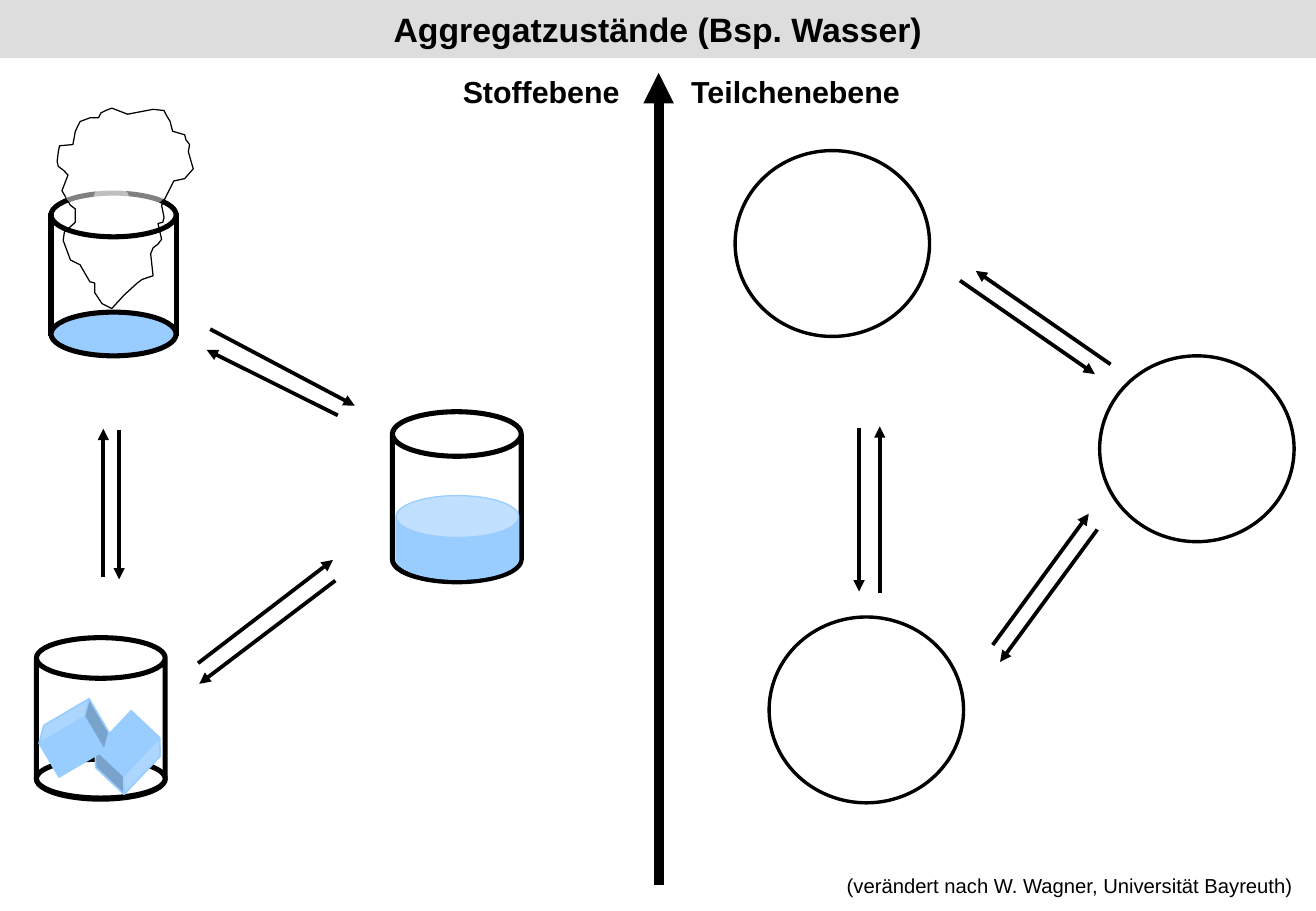
import pptx
import pptx.util
import pptx.dml.color
import pptx.enum.shapes
import pptx.enum.text
import pptx.oxml
import pptx.oxml.ns

Inches = pptx.util.Inches
Pt = pptx.util.Pt
RGBColor = pptx.dml.color.RGBColor
KIND = pptx.enum.shapes.MSO_SHAPE
TEXT = pptx.enum.text

BLACK = RGBColor(0x00, 0x00, 0x00)
WHITE = RGBColor(0xFF, 0xFF, 0xFF)
GREY = RGBColor(0xDD, 0xDD, 0xDD)
BLUE = RGBColor(0x99, 0xCC, 0xFF)

STEAM = [
    (19, 129), (11, 125), (5, 109), (6, 102), (15, 94), (15, 83),
    (11, 80), (4, 68), (9, 55), (5, 51), (1, 48), (0, 44), (1, 36),
    (2, 31), (13, 30), (15, 19), (19, 11), (27, 8), (34, 8), (36, 4),
    (40, 2), (45, 0), (58, 5), (79, 1), (88, 2), (90, 6), (93, 11),
    (95, 19), (105, 22), (106, 26), (109, 30), (108, 36), (112, 50),
    (105, 58), (96, 60), (90, 72), (86, 80), (88, 90), (87, 94),
    (83, 95), (86, 108), (83, 112), (79, 115), (77, 120), (79, 138),
    (70, 141), (66, 144), (55, 154), (45, 165), (37, 161), (31, 152),
    (31, 144), (27, 143), (20, 131),
]


def add_xml(parent, tag, attrs=""):
    space = pptx.oxml.ns.nsdecls("a")
    parent.append(pptx.oxml.parse_xml(f"<a:{tag} {space} {attrs}/>"))


def paint(shape, fill=None, edge=None, width=1):
    shape.shadow.inherit = False
    if fill is None:
        shape.fill.background()
    else:
        shape.fill.solid()
        shape.fill.fore_color.rgb = fill
    if edge is None:
        shape.line.fill.background()
    else:
        shape.line.color.rgb = edge
        shape.line.width = Pt(width)


def add_form(slide, kind, box, fill=None, edge=None, width=1, adjust=None, turn=0):
    shape = slide.shapes.add_shape(kind, *map(Inches, box))
    paint(shape, fill, edge, width)
    if adjust is not None:
        shape.adjustments[0] = adjust
    shape.rotation = turn
    return shape


def add_line(slide, ends, width, arrow=True):
    line = slide.shapes.add_connector(
        pptx.enum.shapes.MSO_CONNECTOR.STRAIGHT, *map(Inches, ends))
    line.line.color.rgb = BLACK
    line.line.width = Pt(width)
    props = line._element.spPr
    if arrow:
        add_xml(props.find(pptx.oxml.ns.qn("a:ln")), "tailEnd", 'type="triangle"')
    add_xml(props, "effectLst")


def set_text(frame, text, size, bold):
    para = frame.paragraphs[0]
    para.text = text
    font = para.font
    font.name, font.size, font.bold = "Arial", Pt(size), bold
    font.color.rgb = BLACK
    return para


def add_label(slide, box, text, size, bold=True):
    frame = slide.shapes.add_textbox(*map(Inches, box)).text_frame
    frame.word_wrap = False
    frame.auto_size = TEXT.MSO_AUTO_SIZE.SHAPE_TO_FIT_TEXT
    set_text(frame, text, size, bold)


def draw_head(slide, box):
    bar = add_form(slide, KIND.RECTANGLE, box, GREY)
    bar.text_frame.vertical_anchor = TEXT.MSO_ANCHOR.MIDDLE
    para = set_text(bar.text_frame, "Aggregatzustände (Bsp. Wasser)", 20, True)
    para.alignment = TEXT.PP_ALIGN.CENTER


def draw_steam(slide, box):
    x, y, w, h = box
    points = [(Inches(x + 0.05 + a / 100), Inches(y + b / 100)) for a, b in STEAM]
    pen = slide.shapes.build_freeform(*points[0])
    pen.add_line_segments(points[1:], close=True)
    paint(pen.convert_to_shape(), edge=BLACK, width=0.75)
    add_form(slide, KIND.OVAL, (x, y + 0.7, w, 0.36), edge=BLACK, width=3)
    for side in (x + w, x):
        add_line(slide, (side, y + 0.86, side, y + h - 0.16), 3, arrow=False)
    add_form(slide, KIND.OVAL, (x, y + h - 0.36, w, 0.36), BLUE, BLACK, 3)
    for left, wide in ((0.12, 0.52), (0.35, 0.58)):
        haze = add_form(slide, KIND.OVAL, (x + left, y + 0.62, wide, 0.21), WHITE)
        solid = haze._element.spPr.find(pptx.oxml.ns.qn("a:solidFill"))
        add_xml(solid[0], "alpha", 'val="50000"')


def draw_water(slide, box):
    x, y, w, h = box
    add_form(slide, KIND.CAN, box, WHITE, BLACK, 3, 0.346)
    add_form(slide, KIND.CAN, (x + 0.03, y + h - 0.71, w - 0.05, 0.69),
             BLUE, BLUE, 0.75, 0.5)


def draw_ice(slide, box):
    x, y, w, h = box
    add_form(slide, KIND.CAN, box, WHITE, BLACK, 3, 0.316)
    add_form(slide, KIND.OVAL, (x, y + h - 0.33, w, 0.32), WHITE, BLACK, 3)
    for left, top, turn in ((0.48, 0.73, 133.3), (0.04, 0.61, 329.5)):
        add_form(slide, KIND.CUBE, (x + left, y + top, 0.54, 0.43),
                 BLUE, BLUE, 1, 0.25, turn)


def draw_arrows(slide, x, y, arrows):
    for x1, y1, x2, y2 in arrows:
        add_line(slide, (x + x1, y + y1, x + x2, y + y2), 2.25)


def draw_matter(slide, box):
    x, y, w, h = box
    draw_water(slide, (x + 3.23, y + 2.89, 1.06, 1.4))
    draw_ice(slide, (x + 0.3, y + 4.75, 1.06, 1.33))
    draw_arrows(slide, x, y, [
        (1.63, 4.96, 2.74, 4.11), (2.76, 4.28, 1.64, 5.13),
        (1.73, 2.21, 2.92, 2.84), (2.78, 2.92, 1.7, 2.38),
        (0.85, 4.25, 0.85, 3.03), (0.98, 3.04, 0.98, 4.27)])
    draw_steam(slide, (x + 0.42, y + 0.39, 1.03, 2.04))
    add_label(slide, (x + 3.71, y + 0.05, 1.51, 0.4), "Stoffebene", 18)


def draw_atoms(slide, box):
    x, y, w, h = box
    draw_arrows(slide, x, y, [
        (3.74, 2.5, 2.63, 1.73), (2.5, 1.81, 3.61, 2.58),
        (2.77, 4.81, 3.56, 3.73), (3.63, 3.86, 2.83, 4.95),
        (1.84, 4.38, 1.84, 3.01), (1.67, 3.02, 1.67, 4.37)])
    for left, top in ((0.65, 0.74), (3.65, 2.43), (0.93, 4.58)):
        add_form(slide, KIND.OVAL, (x + left, y + top, 1.6, 1.53),
                 edge=BLACK, width=2)
    add_label(slide, (x + 0.19, y + 0.05, 1.94, 0.4), "Teilchenebene", 18)
    add_label(slide, (x + 1.47, y + h - 0.36, 3.9, 0.3),
              "(verändert nach W. Wagner, Universität Bayreuth)", 12, False)


def main():
    deck = pptx.Presentation()
    deck.slide_width, deck.slide_height = Inches(10.83), Inches(7.5)
    slide = deck.slides.add_slide(deck.slide_layouts[6])
    draw_head(slide, (0, 0, 10.83, 0.48))
    draw_matter(slide, (0, 0.5, 5.4, 7))
    add_line(slide, (5.42, 7.29, 5.42, 0.6), 6)
    draw_atoms(slide, (5.4, 0.5, 5.43, 7))
    deck.save("out.pptx")


if __name__ == "__main__":
    main()
